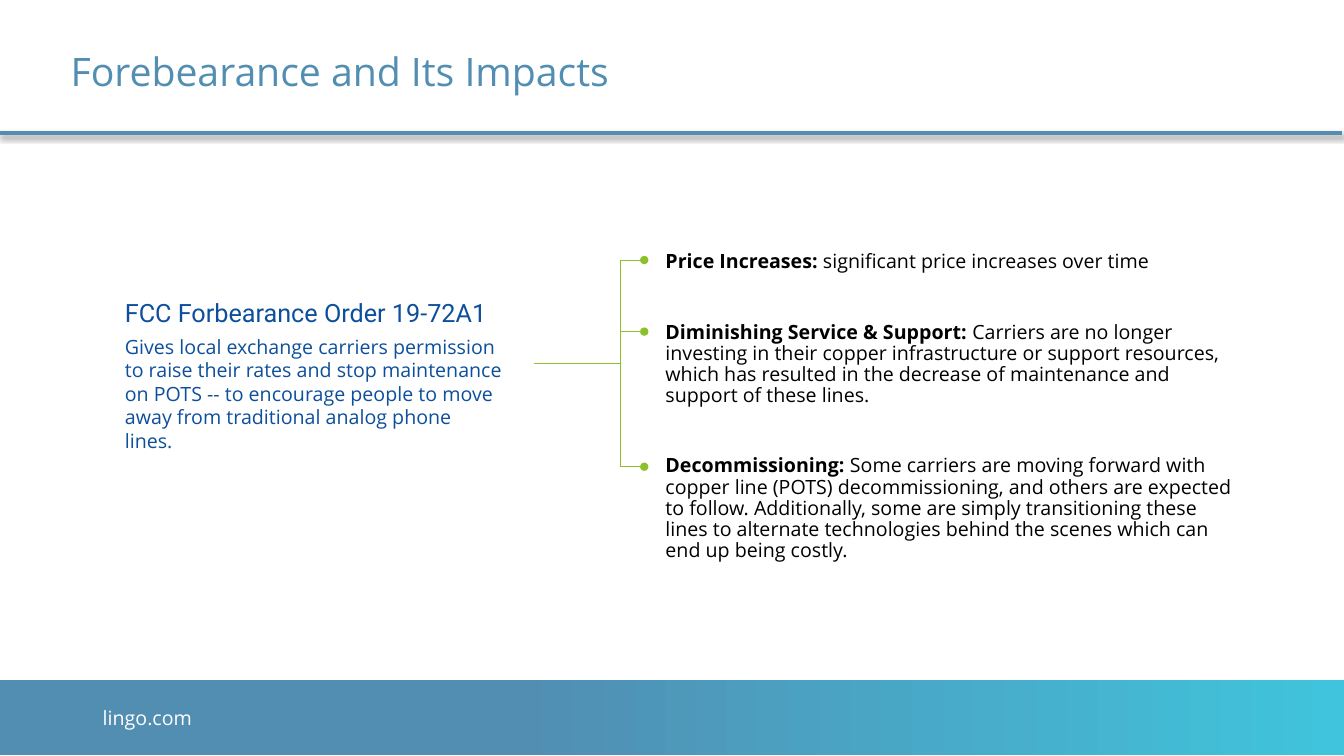
from dataclasses import dataclass

from lxml import etree
from pptx import Presentation
from pptx import util as u
from pptx.dml.color import RGBColor
from pptx.enum import shapes, text
from pptx.oxml import ns

PX = 9144  # EMU in one px, at 100 px to the inch


@dataclass(frozen=True)
class Theme:
    steel: str = "518EB2"
    aqua: str = "40C4DD"
    navy: str = "0D4F9B"
    green: str = "8CC12B"
    black: str = "000000"
    white: str = "FFFFFF"
    font: str = "Open Sans"
    order_font: str = "Roboto"
    title_size: int = 28
    order_size: int = 18
    body_size: int = 14
    rule_width: float = 2.25
    bracket_width: float = 0.79


@dataclass(frozen=True)
class Box:
    left: int
    top: int
    width: int
    height: int

    def emu(self) -> tuple[int, ...]:
        return tuple(n * PX for n in (self.left, self.top, self.width, self.height))


@dataclass(frozen=True)
class Label:
    box: Box
    wording: str
    size: int
    color: str
    font: str


@dataclass(frozen=True)
class Line:
    x1: int
    y1: int
    x2: int
    y2: int
    dot: bool = False


@dataclass(frozen=True)
class Impact:
    name: str
    effect: str


THEME = Theme()

TITLE = Label(Box(60, 25, 664, 96), "Forebearance and Its Impacts",
              THEME.title_size, THEME.steel, THEME.font)
LABELS = [
    Label(Box(92, 695, 252, 40), "lingo.com", THEME.body_size, THEME.white, THEME.font),
    Label(Box(114, 290, 395, 40), "FCC Forbearance Order 19-72A1",
          THEME.order_size, THEME.navy, THEME.order_font),
    Label(Box(114, 327, 395, 104),
          "Gives local exchange carriers permission to raise their rates and stop "
          "maintenance on POTS -- to encourage people to move away from traditional "
          "analog phone lines.",
          THEME.body_size, THEME.navy, THEME.font),
]
IMPACTS_BOX = Box(650, 245, 582, 340)
IMPACTS = [
    Impact("Price Increases:", " significant price increases over time"),
    Impact("Diminishing Service & Support:",
           " Carriers are no longer investing in their copper infrastructure or support "
           "resources, which has resulted in the decrease of maintenance and support of "
           "these lines."),
    Impact("Decommissioning:",
           " Some carriers are moving forward with copper line (POTS) decommissioning, "
           "and others are expected to follow. Additionally, some are simply "
           "transitioning these lines to alternate technologies behind the scenes which "
           "can end up being costly."),
]
FOOTER_BAND = Box(0, 675, 1333, 74)
TITLE_RULE = Line(-3, 132, 1331, 132)
SPINE_X, DOT_X, ORDER_X, ORDER_Y = 615, 639, 530, 361
IMPACT_YS = (258, 329, 463)
BRACKET = [
    Line(SPINE_X, IMPACT_YS[0], SPINE_X, IMPACT_YS[-1]),
    Line(SPINE_X, ORDER_Y, ORDER_X, ORDER_Y),
    *(Line(DOT_X, y, SPINE_X, y, dot=True) for y in IMPACT_YS),
]


def style_run(run, size: int, color: str, font: str, bold: bool = False) -> None:
    run.font.size = u.Pt(size)
    run.font.color.rgb = RGBColor.from_string(color)
    run.font.name = font
    run.font.bold = bold


def place(shape, box: Box) -> None:
    shape.left, shape.top, shape.width, shape.height = box.emu()


def fill_label(frame, label: Label) -> None:
    frame.text = label.wording
    frame.word_wrap = True
    style_run(frame.paragraphs[0].runs[0], label.size, label.color, label.font)


def write_title(slide) -> None:
    title = slide.shapes.title
    place(title, TITLE.box)
    frame = title.text_frame
    fill_label(frame, TITLE)
    frame.auto_size = text.MSO_AUTO_SIZE.NONE
    frame.vertical_anchor = text.MSO_ANCHOR.MIDDLE
    frame.paragraphs[0].alignment = text.PP_ALIGN.LEFT
    frame.paragraphs[0].line_spacing = 0.9


def write_impacts(slide) -> None:
    body = slide.placeholders[1]
    place(body, IMPACTS_BOX)
    frame = body.text_frame
    frame.auto_size = text.MSO_AUTO_SIZE.NONE
    frame.vertical_anchor = text.MSO_ANCHOR.TOP
    for index, impact in enumerate(IMPACTS):
        paragraph = frame.add_paragraph() if index else frame.paragraphs[0]
        properties = paragraph._p.get_or_add_pPr()
        properties.set("marL", "0")
        properties.set("indent", "0")
        etree.SubElement(properties, ns.qn("a:buNone"))
        paragraph.line_spacing = 0.9
        paragraph.space_before = u.Pt(35 if index else 0)
        for wording, bold in ((impact.name, True), (impact.effect, False)):
            run = paragraph.add_run()
            run.text = wording
            style_run(run, THEME.body_size, THEME.black, THEME.font, bold)


def draw_line(slide, line: Line, color: str, width: float):
    """Draw a line and return its empty effect list."""
    connector = slide.shapes.add_connector(
        shapes.MSO_CONNECTOR.STRAIGHT,
        *(n * PX for n in (line.x1, line.y1, line.x2, line.y2)))
    connector.line.color.rgb = RGBColor.from_string(color)
    connector.line.width = u.Pt(width)
    if line.dot:
        etree.SubElement(connector.line._get_or_add_ln(), ns.qn("a:headEnd"), type="oval")
    return etree.SubElement(connector._element.spPr, ns.qn("a:effectLst"))


def draw_title_rule(slide) -> None:
    effects = draw_line(slide, TITLE_RULE, THEME.steel, THEME.rule_width)
    shadow = etree.SubElement(effects, ns.qn("a:outerShdw"), blurRad=str(u.Pt(4)),
                              dist=str(u.Pt(3)), dir="2700000", algn="tl")
    tint = etree.SubElement(shadow, ns.qn("a:srgbClr"), val=THEME.black)
    etree.SubElement(tint, ns.qn("a:alpha"), val="40000")


def draw_footer_band(slide) -> None:
    band = slide.shapes.add_shape(shapes.MSO_SHAPE.RECTANGLE, *FOOTER_BAND.emu())
    band.shadow.inherit = False
    band.line.fill.background()
    band.fill.gradient()
    band.fill.gradient_angle = 0
    stops = ((0.38, THEME.steel), (1.0, THEME.aqua))
    for stop, (position, color) in zip(band.fill.gradient_stops, stops):
        stop.position = position
        stop.color.rgb = RGBColor.from_string(color)


def main() -> None:
    deck = Presentation()
    deck.slide_width, deck.slide_height = 1333 * PX, 750 * PX
    slide = deck.slides.add_slide(deck.slide_layouts[1])
    draw_footer_band(slide)
    draw_title_rule(slide)
    write_title(slide)
    write_impacts(slide)
    for label in LABELS:
        fill_label(slide.shapes.add_textbox(*label.box.emu()).text_frame, label)
    for line in BRACKET:
        draw_line(slide, line, THEME.green, THEME.bracket_width)
    deck.save("out.pptx")


if __name__ == "__main__":
    main()
